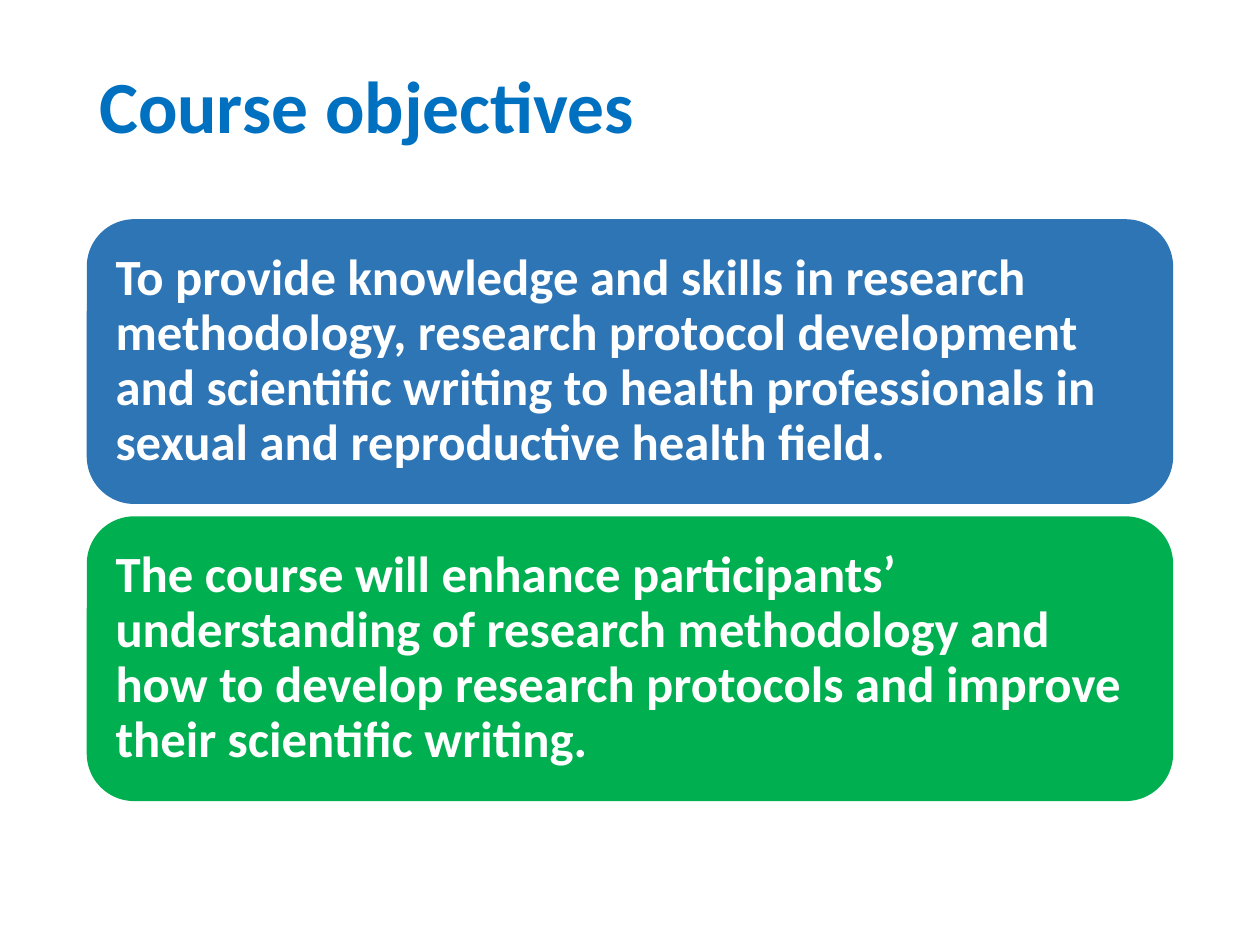
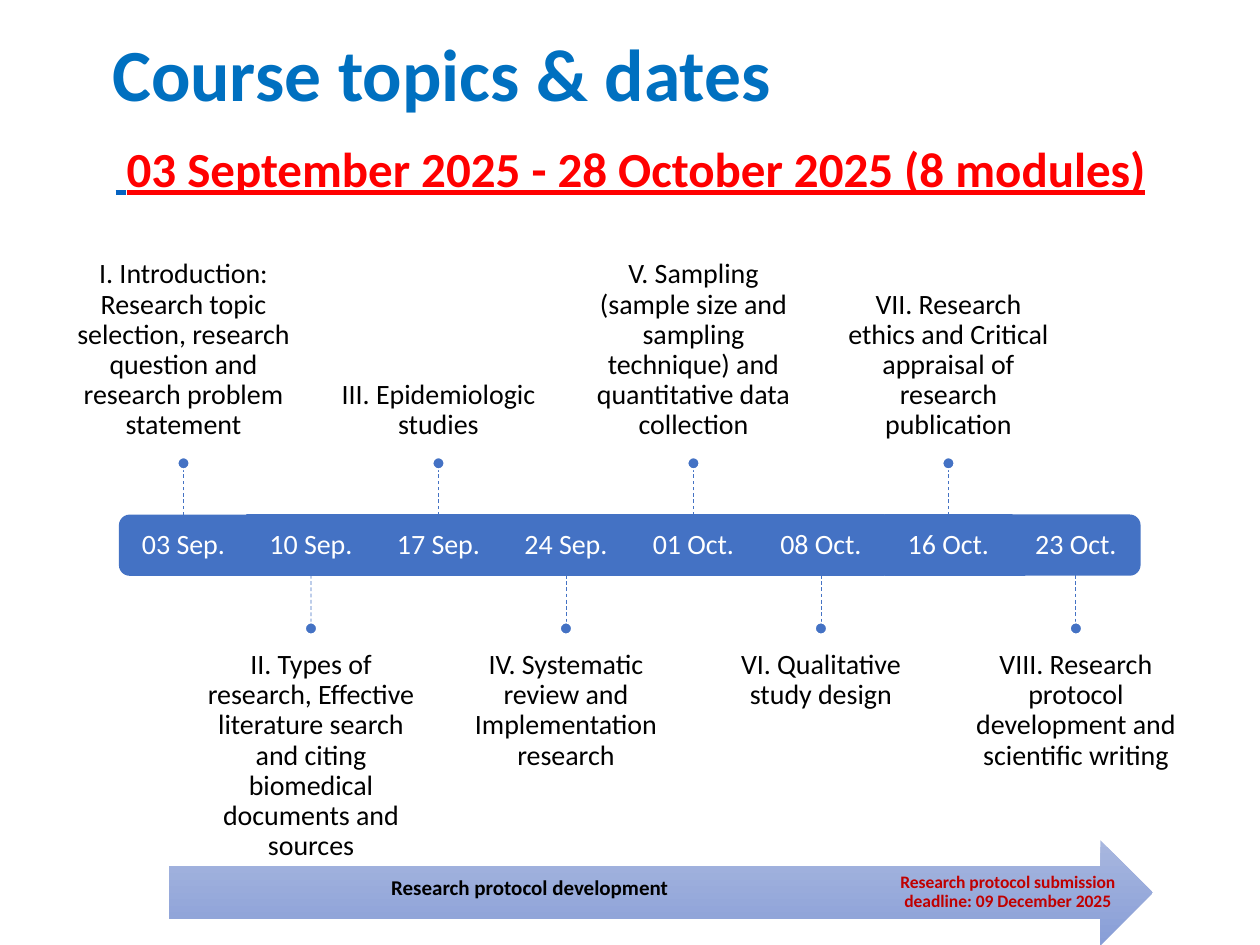
from lxml import etree
from pptx import Presentation
from pptx.dml.color import RGBColor
from pptx.enum.dml import MSO_LINE
from pptx.enum.shapes import MSO_CONNECTOR, MSO_SHAPE
from pptx.enum.text import MSO_ANCHOR, MSO_AUTO_SIZE, PP_ALIGN
from pptx.oxml.ns import qn
from pptx.util import Cm, Pt

LEFT, CENTER = PP_ALIGN.LEFT, PP_ALIGN.CENTER
TOP, MIDDLE, BOTTOM = MSO_ANCHOR.TOP, MSO_ANCHOR.MIDDLE, MSO_ANCHOR.BOTTOM
NO_AUTOFIT = MSO_AUTO_SIZE.NONE
RECTANGLE, ELLIPSE = MSO_SHAPE.RECTANGLE, MSO_SHAPE.OVAL
ROUNDED, ROUNDED_END = MSO_SHAPE.ROUNDED_RECTANGLE, MSO_SHAPE.ROUND_2_SAME_RECTANGLE
RIGHT_ARROW = MSO_SHAPE.RIGHT_ARROW
STRAIGHT, DASH = MSO_CONNECTOR.STRAIGHT, MSO_LINE.DASH

WHITE = RGBColor(0xFF, 0xFF, 0xFF)
BLACK = RGBColor(0x00, 0x00, 0x00)
TITLE_BLUE = RGBColor(0x00, 0x70, 0xC0)
BOX_BLUE = RGBColor(0x2E, 0x75, 0xB6)
BOX_GREEN = RGBColor(0x00, 0xB0, 0x50)
TIMELINE_BLUE = RGBColor(0x44, 0x72, 0xC4)
LINK_BLUE = RGBColor(0x05, 0x63, 0xC1)
RED = RGBColor(0xFF, 0x00, 0x00)
DEADLINE_RED = RGBColor(0xC0, 0x00, 0x00)
ARROW_LIGHT = RGBColor(0xA8, 0xB7, 0xDF)
ARROW_DARK = RGBColor(0x88, 0x9E, 0xD7)

FONT = "Calibri"
TITLE_ONLY = 5
INSETS = (0.25, 0.13, 0.25, 0.13)

OBJECTIVES = [
    ("To provide knowledge and skills in research methodology, research protocol "
     "development and scientific writing to health professionals in sexual and "
     "reproductive health field.", BOX_BLUE),
    ("The course will enhance participants’ understanding of research methodology "
     "and how to develop research protocols and improve their scientific writing.",
     BOX_GREEN),
]
MODULES = [
    ("03 Sep.", "I. Introduction: Research topic selection, research question and "
                "research problem statement"),
    ("10 Sep.", "II. Types of research, Effective literature search and citing "
                "biomedical documents and sources"),
    ("17 Sep.", "III. Epidemiologic studies"),
    ("24 Sep.", "IV. Systematic review and Implementation research"),
    ("01 Oct.", "V. Sampling (sample size and sampling technique) and quantitative "
                "data collection"),
    ("08 Oct.", "VI. Qualitative study design"),
    ("16 Oct.", "VII. Research ethics and Critical appraisal of research publication"),
    ("23 Oct.", "VIII. Research protocol development and scientific writing"),
]


def write(shape, text, size=16, color=BLACK, bold=False, underline=False,
          align=CENTER, anchor=MIDDLE, insets=INSETS, spacing=0.9):
    """Add formatted text to the first paragraph of a shape."""
    frame = shape.text_frame
    frame.word_wrap = True
    frame.auto_size = NO_AUTOFIT
    frame.vertical_anchor = anchor
    (frame.margin_left, frame.margin_top,
     frame.margin_right, frame.margin_bottom) = map(Cm, insets)
    paragraph = frame.paragraphs[0]
    paragraph.alignment = align
    paragraph.line_spacing = spacing
    run = paragraph.add_run()
    run.text = text
    font = run.font
    font.name, font.size, font.bold, font.underline = FONT, Pt(size), bold, underline
    font.color.rgb = color


class Deck:
    """Hold the presentation, its style and the current slide."""

    def __init__(self):
        """Start a 4:3 presentation."""
        self.presentation = Presentation()
        self.presentation.slide_width = Cm(25.4)
        self.presentation.slide_height = Cm(19.05)
        self.slide = None

    def add_slide(self, title, box, spacing):
        """Add a slide with its title placed in the given box."""
        layout = self.presentation.slide_layouts[TITLE_ONLY]
        self.slide = self.presentation.slides.add_slide(layout)
        shape = self.slide.shapes.title
        shape.left, shape.top, shape.width, shape.height = map(Cm, box)
        write(shape, title, size=42, color=TITLE_BLUE, bold=True, align=LEFT,
              spacing=spacing)

    def shape(self, kind, box, fill=None, line=None):
        """Add a preset shape with a plain fill and an optional outline."""
        shape = self.slide.shapes.add_shape(kind, *map(Cm, box))
        shape.shadow.inherit = False
        if fill is not None:
            shape.fill.solid()
            shape.fill.fore_color.rgb = fill
        if line is None:
            shape.line.fill.background()
        else:
            shape.line.color.rgb = line
            shape.line.width = Pt(1)
        return shape

    def text(self, box, text, **style):
        """Add a text box."""
        shape = self.slide.shapes.add_textbox(*map(Cm, box))
        write(shape, text, **style)
        return shape

    def dashed_line(self, x, start, end):
        """Add a vertical dashed connector."""
        line = self.slide.shapes.add_connector(STRAIGHT, Cm(x), Cm(start), Cm(x), Cm(end))
        line.line.color.rgb = TIMELINE_BLUE
        line.line.width = Pt(0.5)
        line.line.dash_style = DASH
        etree.SubElement(line._element.spPr, qn("a:effectLst"))
        return line

    def gradient_arrow(self, box):
        """Add a block arrow shaded from top to bottom."""
        arrow = self.shape(RIGHT_ARROW, box)
        arrow.fill.gradient()
        arrow.fill.gradient_angle = 270
        for stop, color in zip(arrow.fill.gradient_stops, (ARROW_LIGHT, ARROW_DARK)):
            stop.color.rgb = color


def build_objectives(deck):
    """Build the slide with the course objectives."""
    deck.add_slide("Course objectives", (1.75, 0.42, 21.9, 3.6), spacing=0.9)
    for index, (objective, color) in enumerate(OBJECTIVES):
        box = deck.shape(ROUNDED, (1.75, 4.42 + index * 5.99, 21.9, 5.74), color)
        write(box, objective, size=29, color=WHITE, bold=True, align=LEFT,
              insets=(0.3,) * 4)


def build_timeline(deck):
    """Add the dates bar with topics alternating above and below it."""
    pitch, first_center, bar_top, bar_height = 2.57, 3.7, 10.39, 1.2
    bar_bottom, bar_middle = bar_top + bar_height, bar_top + bar_height / 2
    topic_width, topic_height, dot = 4.29, 4.17, 0.24
    rotations = {0: 270, len(MODULES) - 1: 90}
    for index, (date, topic) in enumerate(MODULES):
        center = first_center + index * pitch
        cell_box = (center - pitch / 2, bar_top, pitch, bar_height)
        is_end = index in rotations
        if is_end:
            end_box = (center - bar_height / 2, bar_middle - pitch / 2, bar_height, pitch)
            cell = deck.shape(ROUNDED_END, end_box, TIMELINE_BLUE, TIMELINE_BLUE)
            cell.rotation = rotations[index]
            deck.text(cell_box, date, color=WHITE, insets=(0.33,) * 4)
        else:
            cell = deck.shape(RECTANGLE, cell_box, TIMELINE_BLUE, TIMELINE_BLUE)
            write(cell, date, color=WHITE, insets=(0.33,) * 4)

        if index % 2 == 0:
            topic_top, anchor, insets = 5.05, BOTTOM, (0, 0, 0, 0.33)
            edge, tip, dot_top, side = bar_top, 9.45, 9.22, 0
        else:
            topic_top, anchor, insets = 12.78, TOP, (0, 0.33, 0, 0)
            edge, tip, dot_top, side = bar_bottom, 12.55, 12.55, 2
        deck.text((center - topic_width / 2, topic_top, topic_width, topic_height),
                  topic, anchor=anchor, insets=insets)
        line = deck.dashed_line(center, edge, tip)
        if not is_end:
            line.begin_connect(cell, side)
        deck.shape(ELLIPSE, (center - dot / 2, dot_top, dot, dot), TIMELINE_BLUE, WHITE)


def build_topics(deck):
    """Build the slide with the course topics and dates."""
    deck.add_slide("Course topics & dates", (2.01, 0, 17.5, 2.9), spacing=1)
    period = deck.text((0.91, 2.67, 23.6, 1.45), " ", size=28, color=LINK_BLUE,
                       bold=True, underline=True, anchor=TOP, spacing=1)
    write(period, "03 September 2025 - 28 October 2025 (8 modules)", size=28, color=RED,
          bold=True, underline=True, anchor=TOP, spacing=1)
    build_timeline(deck)
    deck.gradient_arrow((3.4, 16.94, 19.84, 2.11))
    deck.text((17.98, 17.48, 4.67, 1.02),
              "Research protocol submission deadline: 09 December 2025",
              size=10, color=DEADLINE_RED, bold=True, insets=(0, 0.28, 0, 0.28))
    deck.text((4.62, 17.37, 12.12, 1.09), "Research protocol development",
              size=12, bold=True, insets=(0, 0.33, 0, 0.33))


def main():
    """Build both slides and save them."""
    deck = Deck()
    build_objectives(deck)
    build_topics(deck)
    deck.presentation.save("out.pptx")


if __name__ == "__main__":
    main()
